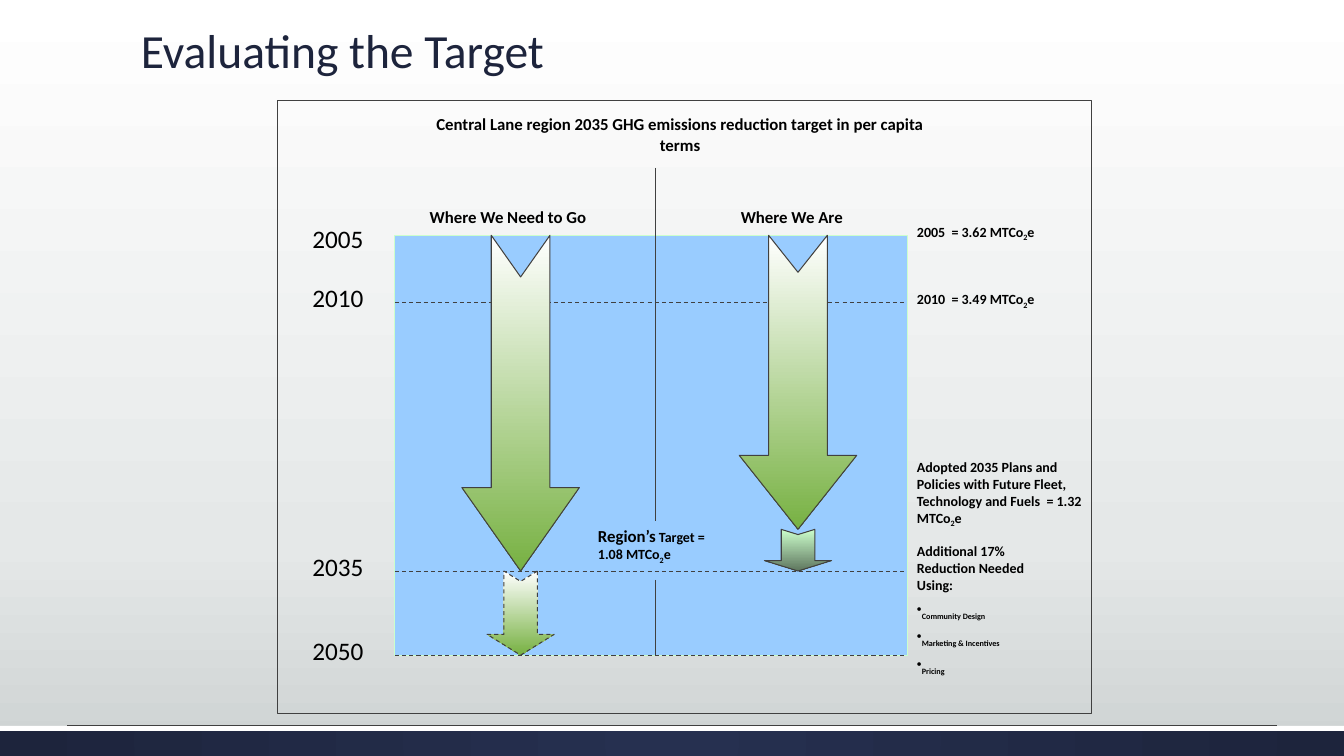
from copy import deepcopy

from lxml import etree
from pptx import Presentation
from pptx.dml.color import RGBColor
from pptx.enum.dml import MSO_LINE
from pptx.enum.shapes import MSO_CONNECTOR, MSO_SHAPE
from pptx.enum.text import MSO_ANCHOR, PP_ALIGN
from pptx.oxml.ns import qn
from pptx.util import Cm, Pt

RECT = MSO_SHAPE.RECTANGLE
ARROW = MSO_SHAPE.NOTCHED_RIGHT_ARROW
STRAIGHT = MSO_CONNECTOR.STRAIGHT
DASH = MSO_LINE.DASH
CENTER = PP_ALIGN.CENTER
BOTTOM = MSO_ANCHOR.BOTTOM

COLORS = {
    "white": "FFFFFF", "mist": "E5E8E8", "gray": "CDD2D2",
    "navy": "1D243C", "blue": "263050", "sky": "99CCFF",
    "mint": "CCFFCC", "moss": "5E765E", "green": "77B142",
    "ink": "404040", "black": "000000",
}
FONT = "Calibri"
WIDTH, HEIGHT = 33.87, 19.05
LEFT, RIGHT, MID = 9.95, 22.86, 16.51
TOP, BASE = 5.93, 16.51
GOAL, NOW = 13.12, 20.11
NOTE = 22.86


def rgb(name):
    return RGBColor.from_string(COLORS[name])


def blend(fill, first, last, angle=0):
    fill.gradient()
    fill.gradient_angle = angle
    for stop, name, place in zip(fill.gradient_stops, (first, last), (0, 1)):
        stop.color.rgb = rgb(name)
        stop.position = place


def paint_back(slide):
    fill = slide.background.fill
    blend(fill, "white", "mist", 270)
    stops = slide.element.find(".//" + qn("a:gsLst"))
    stops.append(deepcopy(stops[-1]))
    fill.gradient_stops[1].position = 0.72
    fill.gradient_stops[2].color.rgb = rgb("gray")


def stroke(line, name, dash=None):
    line.color.rgb = rgb(name)
    line.width = Pt(0.75)
    if dash:
        line.dash_style = dash


def add_box(slide, x, y, w, h, fill=None, edge=None):
    box = slide.shapes.add_shape(RECT, Cm(x), Cm(y), Cm(w), Cm(h))
    box.shadow.inherit = False
    if fill:
        box.fill.solid()
        box.fill.fore_color.rgb = rgb(fill)
    else:
        box.fill.background()
    if edge:
        stroke(box.line, edge)
    else:
        box.line.fill.background()
    return box


def add_foot(slide):
    bar = add_box(slide, 0, 18.29, WIDTH, 0.76, "navy")
    blend(bar.fill, "blue", "navy")
    grad = bar.element.spPr.find(qn("a:gradFill"))
    grad.remove(grad.find(qn("a:lin")))
    ring = etree.SubElement(grad, qn("a:path"), {"path": "circle"})
    sides = dict.fromkeys("ltrb", "50000")
    etree.SubElement(ring, qn("a:fillToRect"), sides)
    add_box(slide, 0, 18.29, WIDTH, 0.13, "white")
    add_line(slide, 1.69, 18.27, 32.17, 18.27)


def add_line(slide, x1, y1, x2, y2, dash=None):
    line = slide.shapes.add_connector(STRAIGHT, Cm(x1), Cm(y1), Cm(x2), Cm(y2))
    stroke(line.line, "ink", dash)
    etree.SubElement(line.element.spPr, qn("a:effectLst"))


def add_arrow(slide, mid, top, end, w, head, tones, dash=None):
    size = end - top
    x, y = mid - size / 2, (top + end - w) / 2
    arrow = slide.shapes.add_shape(ARROW, Cm(x), Cm(y), Cm(size), Cm(w))
    arrow.rotation = 90
    arrow.shadow.inherit = False
    arrow.adjustments[0] = 0.5
    arrow.adjustments[1] = head
    blend(arrow.fill, *tones)
    stroke(arrow.line, "ink", dash)


def add_run(para, text, size, bold=True, color="black", sub=False):
    run = para.add_run()
    run.text = text
    font = run.font
    font.name, font.size, font.bold = FONT, Pt(size), bold
    font.color.rgb = rgb(color)
    if sub:
        run._r.get_or_add_rPr().set("baseline", "-25000")


def add_frame(slide, x, y, w, h):
    frame = slide.shapes.add_textbox(Cm(x), Cm(y), Cm(w), Cm(h)).text_frame
    frame.word_wrap = True
    return frame


def add_label(slide, x, y, w, h, text, size, bold=True, align=None):
    para = add_frame(slide, x, y, w, h).paragraphs[0]
    para.alignment = align
    add_run(para, text, size, bold)


def add_value(slide, x, y, w, h, text, lead=None):
    para = add_frame(slide, x, y, w, h).paragraphs[0]
    if lead:
        add_run(para, lead, 12)
    add_run(para, text + " MTCo", 10)
    add_run(para, "2", 10, sub=True)
    add_run(para, "e", 10)


def add_title(slide, text):
    frame = add_frame(slide, 3.3, 0.48, 26.42, 1.63)
    frame.vertical_anchor = BOTTOM
    para = frame.paragraphs[0]
    para.line_spacing = 0.9
    add_run(para, text, 34, False, "navy")


def add_list(slide, x, y, w, h, head, items):
    frame = add_frame(slide, x, y, w, h)
    add_run(frame.paragraphs[0], head, 10)
    for item in items:
        para = frame.add_paragraph()
        para.space_before = Pt(6)
        etree.SubElement(para._p.get_or_add_pPr(), qn("a:buChar"), char="•")
        add_run(para, item, 10, sub=True)


def main():
    deck = Presentation()
    deck.slide_width, deck.slide_height = Cm(WIDTH), Cm(HEIGHT)
    slide = deck.slides.add_slide(deck.slide_layouts[6])
    paint_back(slide)
    add_foot(slide)
    add_title(slide, "Evaluating the Target")

    add_box(slide, 6.99, 2.54, 20.53, 15.45, edge="ink")
    add_box(slide, LEFT, TOP, RIGHT - LEFT, BASE - TOP, "sky", "mint")
    for y in (7.62, 14.39, BASE):
        add_line(slide, LEFT, y, RIGHT, y, DASH)
    add_line(slide, MID, 4.23, MID, 13.12)
    add_line(slide, MID, 14.61, MID, BASE)

    leaf = ("white", "green")
    add_arrow(slide, GOAL, TOP, 14.39, 2.96, 0.71, leaf)
    add_arrow(slide, GOAL, 14.39, BASE, 1.69, 0.31, leaf, DASH)
    add_arrow(slide, NOW, TOP, 13.34, 2.96, 0.63, leaf)
    add_arrow(slide, NOW, 13.34, 14.39, 1.69, 0.25, ("mint", "moss"))

    years = {"2005": 5.5, "2010": 6.99, "2035": 13.76, "2050": 15.88}
    for year, y in years.items():
        add_label(slide, 7.62, y, 2.12, 1.02, year, 18, False)
    add_label(slide, 10.58, 2.75, 13.12, 1.28,
              "Central Lane region 2035 GHG emissions reduction target"
              " in per capita terms", 12, align=CENTER)
    add_label(slide, 10.58, 5.08, 5.08, 0.77, "Where We Need to Go", 12)
    add_label(slide, 18.42, 5.08, 3.39, 0.77, "Where We Are", 12)

    add_value(slide, 14.82, 13.12, 3.81, 1.2, " Target = 1.08", "Region’s")
    add_value(slide, NOTE, 5.5, 4.66, 0.68, "2005  = 3.62")
    add_value(slide, NOTE, 7.2, 4.66, 0.68, "2010  = 3.49")
    add_value(slide, NOTE, 11.43, 4.66, 1.96,
              "Adopted 2035 Plans and Policies with Future Fleet,"
              " Technology and Fuels  = 1.32")
    add_list(slide, NOTE, 13.55, 3.39, 2.88,
             "Additional 17% Reduction Needed Using:",
             ("Community Design", "Marketing & Incentives", "Pricing"))
    deck.save("out.pptx")


if __name__ == "__main__":
    main()
